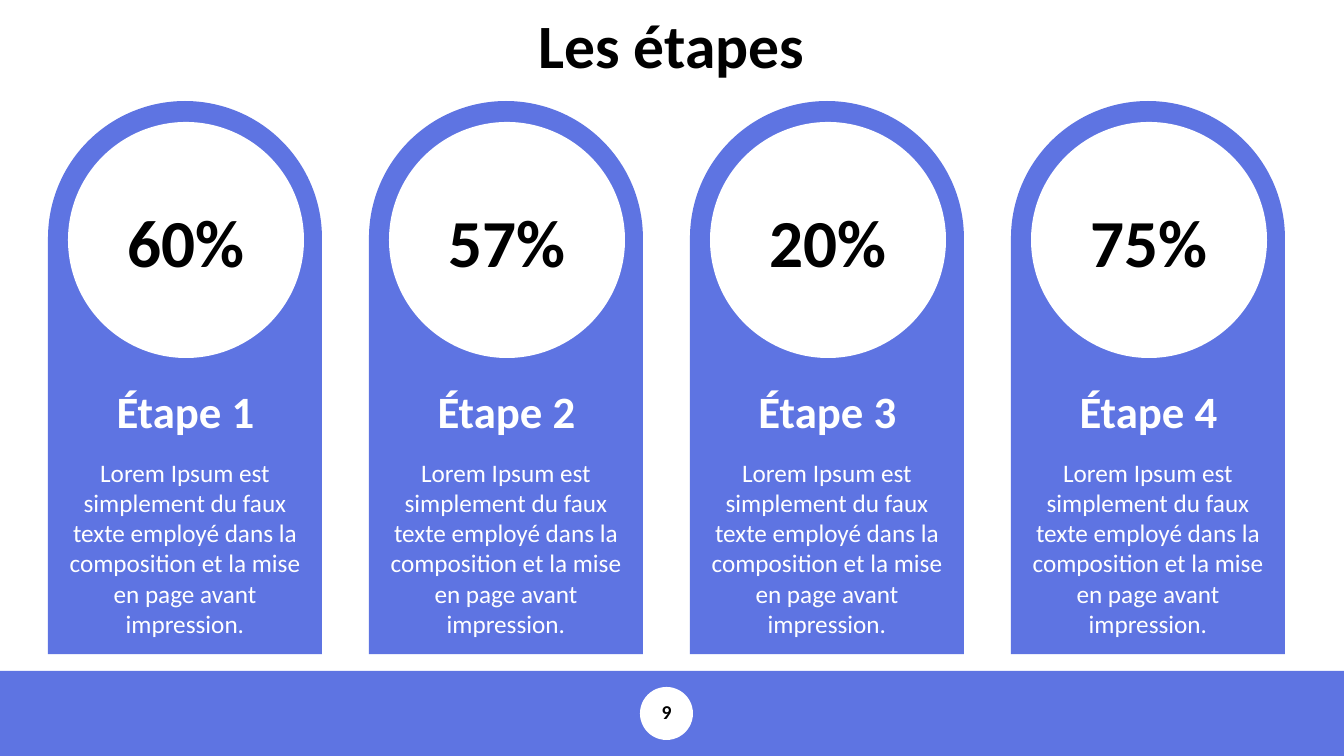
import pptx
import pptx.dml.color
import pptx.enum.shapes
import pptx.enum.text
import pptx.util

PX = 9144000 / 1008
SHAPE = pptx.enum.shapes.MSO_SHAPE
THEME = {
    "font": "Calibri",
    "blue": pptx.dml.color.RGBColor.from_string("5E74E2"),
    "white": pptx.dml.color.RGBColor.from_string("FFFFFF"),
    "black": pptx.dml.color.RGBColor.from_string("000000"),
    "title": 44,
    "percent": 48,
    "heading": 32,
    "body": 18,
    "page": 14,
}
CARD_LEFT, CARD_PITCH, CARD_WIDTH = 48, 321, 274
STEPS = [("60%", "Étape 1"), ("57%", "Étape 2"), ("20%", "Étape 3"), ("75%", "Étape 4")]
DESCRIPTION = (
    "Lorem Ipsum est simplement du faux texte employé dans la "
    "composition et la mise en page avant impression."
)


def add_filled(shapes, preset, box, color):
    filled = shapes.add_shape(preset, *(round(length * PX) for length in box))
    filled.shadow.inherit = False
    filled.fill.solid()
    filled.fill.fore_color.rgb = THEME[color]
    filled.line.fill.background()
    return filled


def add_label(shapes, text, box, size, color, bold=True, wrap=False):
    frame = shapes.add_textbox(*(round(length * PX) for length in box)).text_frame
    frame.word_wrap = wrap
    frame.auto_size = pptx.enum.text.MSO_AUTO_SIZE.SHAPE_TO_FIT_TEXT
    paragraph = frame.paragraphs[0]
    paragraph.alignment = pptx.enum.text.PP_ALIGN.CENTER
    run = paragraph.add_run()
    run.text = text
    run.font.color.rgb = THEME[color]
    style = {"name": THEME["font"], "size": pptx.util.Pt(THEME[size]), "bold": bold}
    for attribute, value in style.items():
        setattr(run.font, attribute, value)
    return paragraph


deck = pptx.Presentation()
deck.slide_width = round(1344 * PX)
deck.slide_height = round(756 * PX)
slide = deck.slides.add_slide(deck.slide_layouts[6])

# Footer band with the page number
add_filled(slide.shapes, SHAPE.RECTANGLE, (0, 671, 1344, 85), "blue")
page_badge = slide.shapes.add_group_shape().shapes
add_filled(page_badge, SHAPE.OVAL, (640, 687, 53, 53), "white")
page_number = add_label(page_badge, "9", (623, 698, 87, 31), "page", "black", wrap=True)
page_number.line_spacing = 0.9

add_label(slide.shapes, "Les étapes", (527, 2, 289, 85), "title", "black")

# One arched card per step
for index, (percent, heading) in enumerate(STEPS):
    left = CARD_LEFT + index * CARD_PITCH
    card = slide.shapes.add_group_shape().shapes
    arch = add_filled(card, SHAPE.ROUND_2_SAME_RECTANGLE, (left, 101, CARD_WIDTH, 553), "blue")
    arch.adjustments[0] = 0.5
    arch.adjustments[1] = 0
    add_filled(card, SHAPE.OVAL, (left + 20, 122, 236, 236), "white")
    add_label(card, percent, (left + 69, 195, 139, 92), "percent", "black")
    add_label(card, DESCRIPTION, (left, 452, CARD_WIDTH, 194), "body", "white", bold=False, wrap=True)
    add_label(card, heading, (left + 58, 379, 159, 65), "heading", "white")

deck.save("out.pptx")
